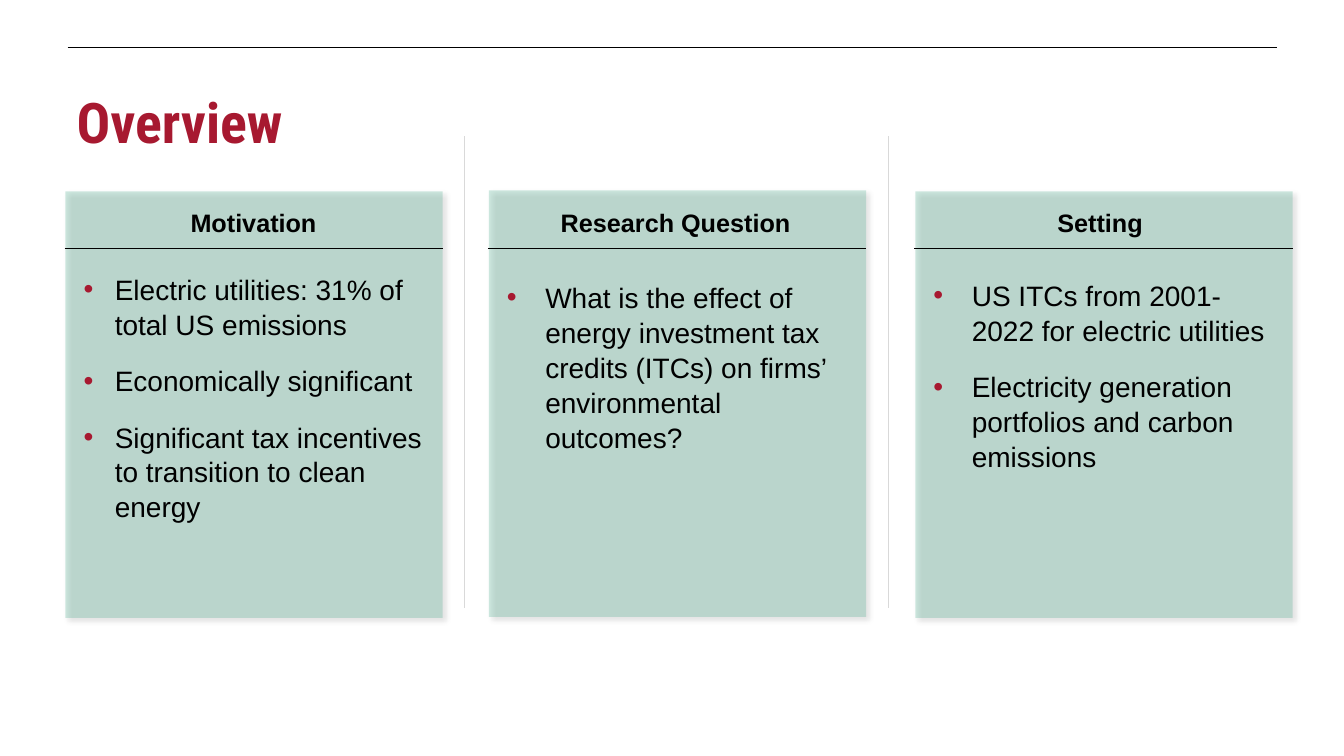
"""Build the Overview slide with three topic cards."""
from dataclasses import dataclass

from lxml.etree import SubElement
from pptx import Presentation
from pptx.dml.color import RGBColor
from pptx.enum.shapes import MSO_CONNECTOR, MSO_SHAPE
from pptx.enum.text import MSO_ANCHOR, PP_ALIGN
from pptx.oxml.ns import qn
from pptx.util import Inches, Pt

BLACK = RGBColor(0x00, 0x00, 0x00)
CRIMSON = RGBColor(0xA7, 0x19, 0x30)
GREEN = RGBColor(0x52, 0xB1, 0x92)
GREY = RGBColor(0xD9, 0xD9, 0xD9)

CARD_WIDTH, CARD_HEIGHT = 3.74, 4.23
HEADING_TOP, HEADING_HEIGHT = 2.01, 0.64
BODY_WIDTH, BODY_HEIGHT = 3.59, 3.06
RULE_TOP = 2.47

TITLE_FORMAT = {"name": "Roboto Condensed", "size": Pt(40), "bold": True}
HEADING_FORMAT = {"name": "Arial", "size": Pt(18), "bold": True}
BODY_FORMAT = {"name": "Arial", "size": Pt(20), "bold": False}


@dataclass(frozen=True)
class Card:
    """A topic card; lengths are in inches."""

    left: float
    top: float
    heading: str
    heading_left: float
    heading_width: float
    body_top: float
    indent: float
    points: tuple[str, ...]


@dataclass(frozen=True)
class Rule:
    """A straight line; lengths are in inches and width in points."""

    start: tuple[float, float]
    end: tuple[float, float]
    color: RGBColor
    width: float


CARDS = (
    Card(0.65, 1.9, "Motivation", 0.76, 3.51, 2.64, 0.31, (
        "Electric utilities: 31% of total US emissions",
        "Economically significant",
        "Significant tax incentives to transition to clean energy",
    )),
    Card(4.85, 1.89, "Research Question ", 4.94, 3.59, 2.72, 0.38, (
        "What is the effect of energy investment tax credits (ITCs) "
        "on firms’ environmental outcomes?",
    )),
    Card(9.08, 1.9, "Setting ", 9.15, 3.59, 2.7, 0.38, (
        "US ITCs from 2001-2022 for electric utilities",
        "Electricity generation portfolios and carbon emissions",
    )),
)
FRAME_RULES = (
    Rule((4.61, 1.35), (4.61, 6.03), GREY, 1),
    Rule((8.81, 1.35), (8.81, 6.03), GREY, 1),
    Rule((0.67, 0.47), (12.67, 0.47), BLACK, 0.5),
)


def format_font(font, values: dict, color: RGBColor) -> None:
    """Apply format values and a colour to a font."""
    for name, value in values.items():
        setattr(font, name, value)
    font.color.rgb = color


def draw_rule(page, rule: Rule) -> None:
    """Draw a straight line without a shadow."""
    line = page.shapes.add_connector(
        MSO_CONNECTOR.STRAIGHT, *map(Inches, rule.start + rule.end))
    line.line.color.rgb = rule.color
    line.line.width = Pt(rule.width)
    SubElement(line._element.spPr, qn("a:effectLst"))


def draw_panel(page, card: Card) -> None:
    """Draw the translucent card background with its soft shadow."""
    panel = page.shapes.add_shape(MSO_SHAPE.RECTANGLE, *map(
        Inches, (card.left, card.top, CARD_WIDTH, CARD_HEIGHT)))
    panel.fill.solid()
    panel.fill.fore_color.rgb = GREEN
    panel.line.fill.background()
    properties = panel._element.spPr
    fill_color = properties.find(qn("a:solidFill"))[0]
    SubElement(fill_color, qn("a:alpha"), val="28000")
    effects = SubElement(properties, qn("a:effectLst"))
    shadow = SubElement(
        effects, qn("a:outerShdw"), blurRad=str(Pt(4)), dist=str(Pt(3)),
        dir="2700000", algn="tl", rotWithShape="0")
    shadow_color = SubElement(shadow, qn("a:srgbClr"), val=str(BLACK))
    SubElement(shadow_color, qn("a:alpha"), val="40000")


def add_bullet(para, indent: float) -> None:
    """Give a paragraph a crimson bullet and a hanging indent."""
    properties = para._p.get_or_add_pPr()
    properties.set("marL", str(Inches(indent)))
    properties.set("indent", str(-Inches(indent)))
    bullet_color = SubElement(properties, qn("a:buClr"))
    SubElement(bullet_color, qn("a:srgbClr"), val=str(CRIMSON))
    SubElement(properties, qn("a:buFont"), typeface="Arial")
    SubElement(properties, qn("a:buChar"), char="•")


def add_text_frame(page, left: float, top: float, width: float, height: float):
    """Add a wrapping text box and return its text frame."""
    box = page.shapes.add_textbox(*map(Inches, (left, top, width, height)))
    box.text_frame.word_wrap = True
    return box.text_frame


def draw_card(page, card: Card) -> None:
    """Draw one card with its heading, rule and bullet points."""
    draw_panel(page, card)
    heading = add_text_frame(page, card.heading_left, HEADING_TOP,
                             card.heading_width, HEADING_HEIGHT).paragraphs[0]
    heading.alignment = PP_ALIGN.CENTER
    span = heading.add_run()
    span.text = card.heading
    format_font(span.font, HEADING_FORMAT, BLACK)

    body = add_text_frame(page, card.left + 0.08, card.body_top,
                          BODY_WIDTH, BODY_HEIGHT)
    for number, point in enumerate(card.points):
        para = body.add_paragraph() if number else body.paragraphs[0]
        para.line_spacing = 1.04
        if number:
            para.space_before = Pt(15.3)
        add_bullet(para, card.indent)
        span = para.add_run()
        span.text = point
        format_font(span.font, BODY_FORMAT, BLACK)

    left = card.left - 0.01
    draw_rule(page, Rule((left, RULE_TOP), (left + 3.75, RULE_TOP), BLACK, 0.75))


def place_title(page) -> None:
    """Place and format the title placeholder."""
    title = page.shapes.title
    geometry = {"left": 0.66, "top": 0.96, "width": 3.17, "height": 0.6}
    for name, value in geometry.items():
        setattr(title, name, Inches(value))
    title.text_frame.vertical_anchor = MSO_ANCHOR.MIDDLE
    para = title.text_frame.paragraphs[0]
    para.alignment = PP_ALIGN.LEFT
    para.line_spacing = 0.8
    span = para.add_run()
    span.text = "Overview"
    format_font(span.font, TITLE_FORMAT, CRIMSON)


def main() -> None:
    """Create and save the deck."""
    deck = Presentation()
    deck.slide_width, deck.slide_height = Inches(13.33), Inches(7.5)
    page = deck.slides.add_slide(deck.slide_layouts.get_by_name("Title Only"))
    place_title(page)
    for rule in FRAME_RULES:
        draw_rule(page, rule)
    for card in CARDS:
        draw_card(page, card)
    deck.save("out.pptx")


if __name__ == "__main__":
    main()
